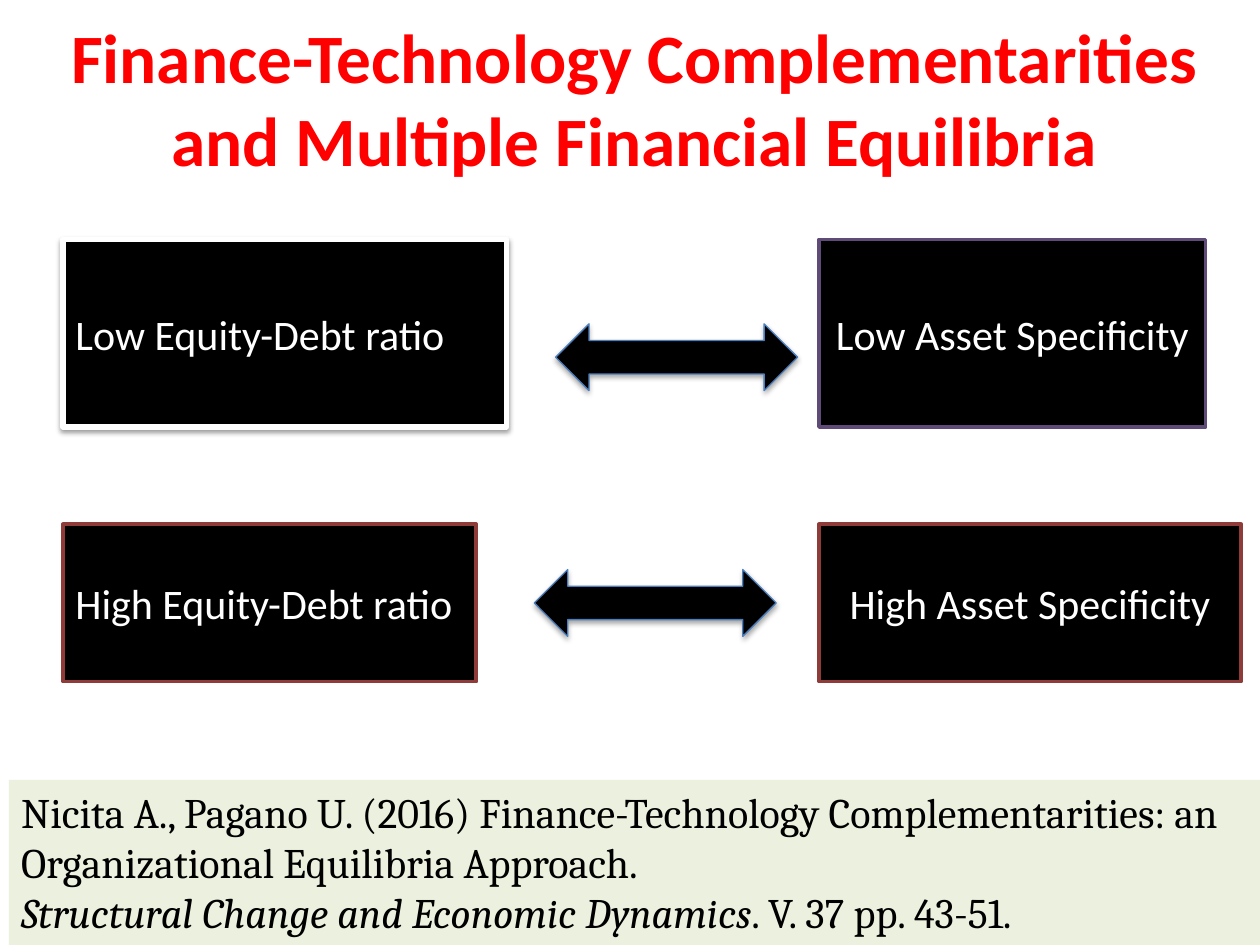
from dataclasses import dataclass
from typing import Optional

import pptx
import pptx.dml.color
import pptx.enum.shapes
import pptx.enum.text
import pptx.oxml
import pptx.oxml.ns
import pptx.util

RGB = pptx.dml.color.RGBColor
Kind = pptx.enum.shapes.MSO_SHAPE
Align = pptx.enum.text.PP_ALIGN
Anchor = pptx.enum.text.MSO_ANCHOR
Fit = pptx.enum.text.MSO_AUTO_SIZE
Pt = pptx.util.Pt

RED = RGB(0xFF, 0x00, 0x00)
BLACK = RGB(0x00, 0x00, 0x00)
WHITE = RGB(0xFF, 0xFF, 0xFF)
PURPLE = RGB(0x5F, 0x4A, 0x78)
BROWN = RGB(0x8E, 0x3B, 0x39)
BLUE = RGB(0x4B, 0x7E, 0xBC)
PALE = RGB(0xEB, 0xF1, 0xDE)

WIDE = pptx.util.Inches(10)
HIGH = pptx.util.Inches(7.5)


@dataclass
class Area:
    """A place on the slide, in percent of its width and height."""
    left: float
    top: float
    width: float
    height: float

    def emu(self) -> tuple[int, ...]:
        return (int(WIDE * self.left / 100), int(HIGH * self.top / 100),
                int(WIDE * self.width / 100), int(HIGH * self.height / 100))


@dataclass
class Shade:
    """A shadow falling straight down; alpha in percent, lengths in points."""
    alpha: int
    blur: float
    drop: float


@dataclass
class Box:
    text: str
    area: Area
    edge: RGB
    line: float = 2
    align: Align = Align.CENTER
    shade: Optional[Shade] = None


LEFT, RIGHT = 5, 65
LOW, LOW_H = 25.33, 19.87
TALL, TALL_H = 55.47, 16.67
BOXES = [
    Box("Low Asset Specificity", Area(RIGHT, LOW, 30.7, LOW_H), PURPLE),
    Box("Low Equity-Debt ratio", Area(LEFT, LOW, 35.2, LOW_H), WHITE, 3,
        Align.LEFT, Shade(38, 3.1, 1.6)),
    Box("High Asset Specificity", Area(RIGHT, TALL, 33.5, TALL_H), BROWN),
    Box("High Equity-Debt ratio", Area(LEFT, TALL, 32.8, TALL_H), BROWN,
        align=Align.LEFT),
]
ARROWS = [Area(42.4, 60.27, 19.2, 7.07), Area(44.1, 34.27, 19.2, 7.07)]
SOURCE = [
    [("Nicita A., Pagano U. (2016) Finance-Technology Complementarities: "
      "an Organizational Equilibria Approach.", False)],
    [("Structural Change and Economic Dynamics", True),
     (". V. 37 pp. 43-51.", False)],
]


def add_shade(shape, shade: Shade) -> None:
    ns = pptx.oxml.ns.nsdecls("a")
    shadow = pptx.oxml.parse_xml(
        f'<a:outerShdw {ns} blurRad="{Pt(shade.blur)}" dist="{Pt(shade.drop)}"'
        ' dir="5400000" rotWithShape="0"><a:srgbClr val="000000">'
        f'<a:alpha val="{shade.alpha * 1000}"/></a:srgbClr></a:outerShdw>')
    shape._element.spPr.find(pptx.oxml.ns.qn("a:effectLst")).append(shadow)


def add_shape(slide, kind: Kind, area: Area, fill: RGB,
              edge: Optional[RGB] = None, line: float = 0,
              shade: Optional[Shade] = None):
    shape = slide.shapes.add_shape(kind, *area.emu())
    shape.shadow.inherit = False
    shape.fill.solid()
    shape.fill.fore_color.rgb = fill
    if edge is None:
        shape.line.fill.background()
    else:
        shape.line.color.rgb = edge
        shape.line.width = Pt(line)
    if shade:
        add_shade(shape, shade)
    return shape


def set_font(para, name: str, size: float, color: RGB) -> None:
    para.font.name = name
    para.font.size = Pt(size)
    para.font.color.rgb = color


def add_title(slide) -> None:
    title = slide.shapes.title
    title.left, title.top, title.width, title.height = Area(
        0.7, 0, 99.3, 20.67).emu()
    frame = title.text_frame
    frame.text = ("Finance-Technology Complementarities "
                  "and Multiple Financial Equilibria")
    frame.word_wrap = True
    frame.auto_size = Fit.NONE
    frame.vertical_anchor = Anchor.MIDDLE
    para = frame.paragraphs[0]
    para.alignment = Align.CENTER
    set_font(para, "Calibri", 39.6, RED)
    para.font.bold = True


def add_box(slide, box: Box) -> None:
    shape = add_shape(slide, Kind.RECTANGLE, box.area, BLACK, box.edge,
                      box.line, box.shade)
    frame = shape.text_frame
    frame.text = box.text
    frame.word_wrap = True
    frame.vertical_anchor = Anchor.MIDDLE
    para = frame.paragraphs[0]
    para.alignment = box.align
    set_font(para, "Calibri", 24, WHITE)


def add_source(slide) -> None:
    shape = add_shape(slide, Kind.RECTANGLE, Area(0.7, 82.53, 99.3, 17.47),
                      PALE)
    frame = shape.text_frame
    frame.word_wrap = True
    frame.auto_size = Fit.SHAPE_TO_FIT_TEXT
    frame.vertical_anchor = Anchor.TOP
    for row, parts in enumerate(SOURCE):
        para = frame.add_paragraph() if row else frame.paragraphs[0]
        para.alignment = Align.LEFT
        set_font(para, "Cambria", 24, BLACK)
        for text, slant in parts:
            run = para.add_run()
            run.text = text
            run.font.italic = slant


def main() -> None:
    deck = pptx.Presentation()
    deck.slide_width, deck.slide_height = WIDE, HIGH
    slide = deck.slides.add_slide(deck.slide_layouts.get_by_name("Title Only"))
    add_title(slide)
    for box in BOXES:
        add_box(slide, box)
    add_source(slide)
    for area in ARROWS:
        add_shape(slide, Kind.LEFT_RIGHT_ARROW, area, BLACK, BLUE, 0.75,
                  Shade(35, 3.1, 1.8))
    deck.save("out.pptx")


if __name__ == "__main__":
    main()
